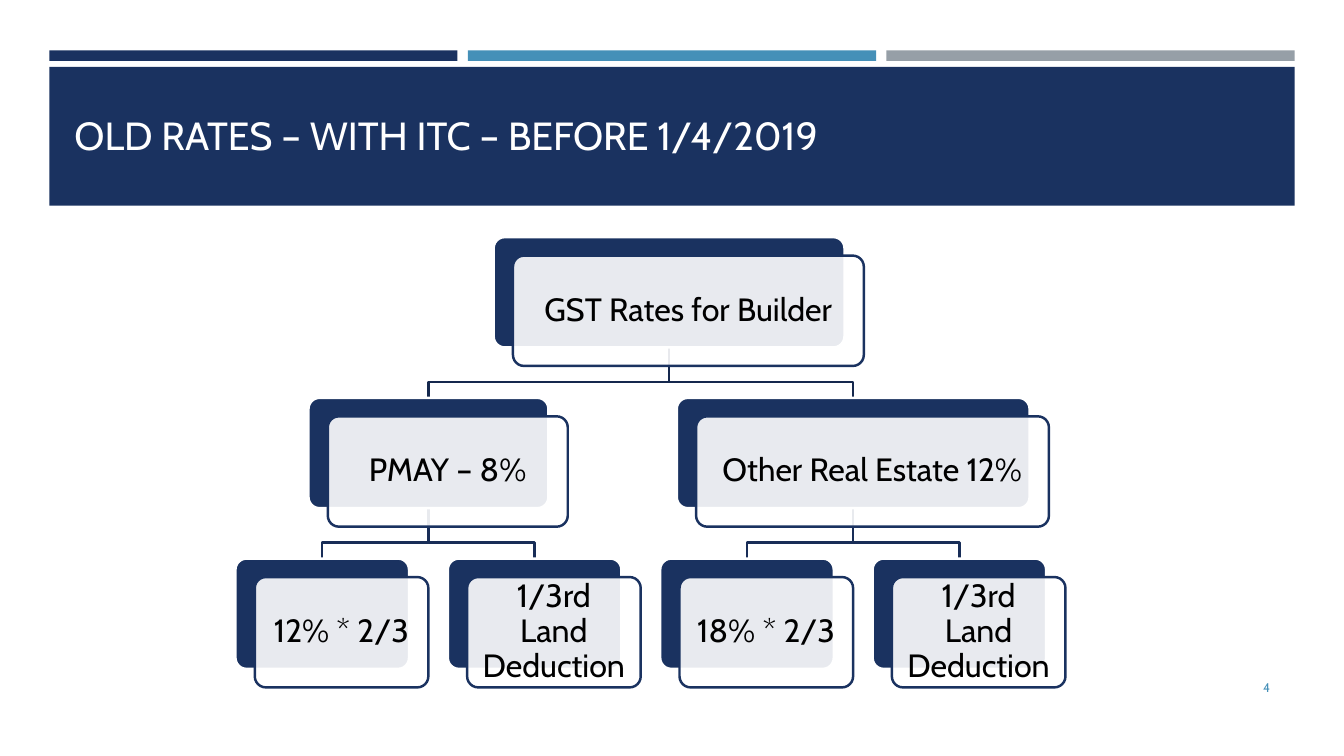
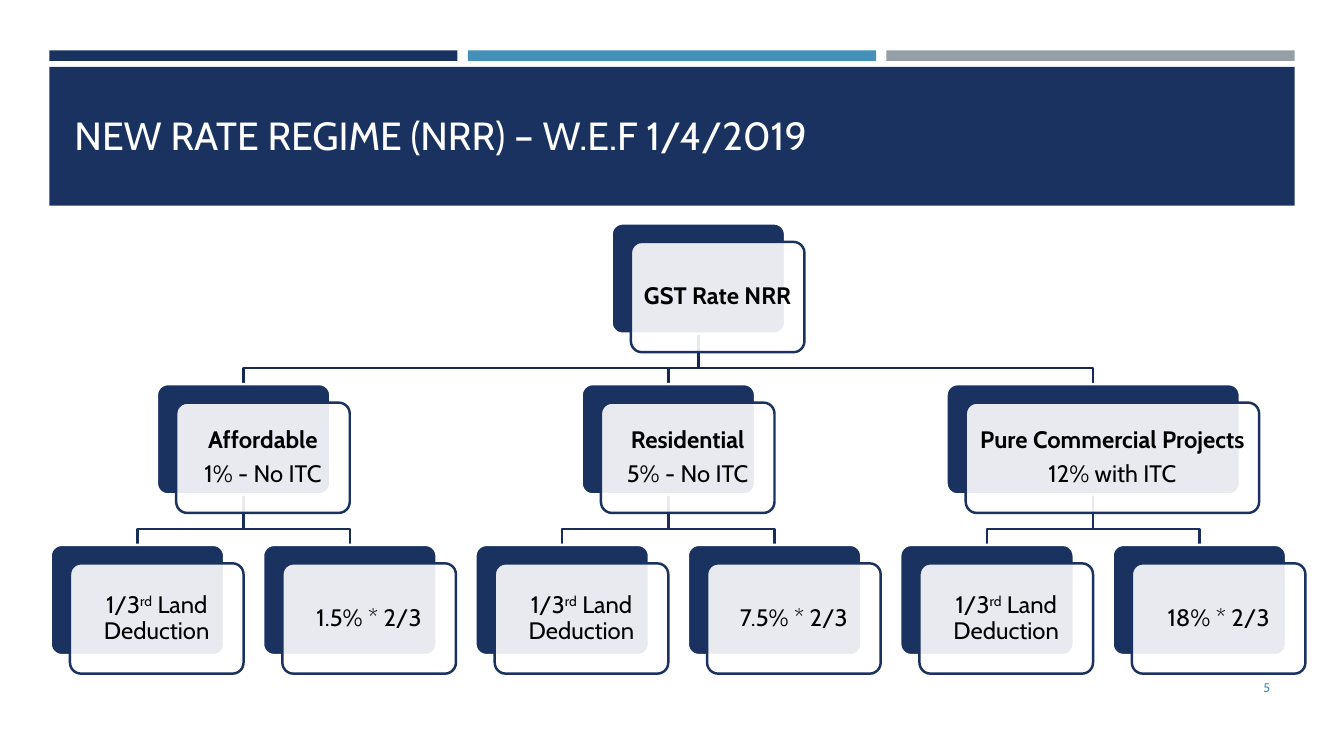
from lxml import etree
from pptx import Presentation
from pptx.dml.color import RGBColor
from pptx.enum.shapes import MSO_SHAPE
from pptx.enum.text import MSO_ANCHOR, PP_ALIGN
from pptx.oxml.ns import qn
from pptx.util import Pt

RECT, ROUNDED = MSO_SHAPE.RECTANGLE, MSO_SHAPE.ROUNDED_RECTANGLE
MIDDLE = MSO_ANCHOR.MIDDLE
LEFT, CENTER, RIGHT = PP_ALIGN.LEFT, PP_ALIGN.CENTER, PP_ALIGN.RIGHT

NAVY = RGBColor(0x1A, 0x32, 0x60)
BLUE = RGBColor(0x45, 0x90, 0xB8)
GREY = RGBColor(0x96, 0x9F, 0xA7)
WHITE = RGBColor(0xFF, 0xFF, 0xFF)
BLACK = RGBColor(0x00, 0x00, 0x00)
ROOT_LINK = RGBColor(0x15, 0x28, 0x4D)
BRANCH_LINK = RGBColor(0x18, 0x2D, 0x57)
FONT = "Cabin"

# Band measures in points: three strips share the width of the title band
BAND_LEFT, BAND_WIDTH, STRIP_GAP = 35.2, 889.6, 7.4
STRIP_WIDTH = (BAND_WIDTH - 2 * STRIP_GAP) / 3

# Tree measures in points
LEAF_WIDTH, LEAF_PITCH = 124, 151.7
CARD_HEIGHT, LEVEL_PITCH = 78.8, 114.8
FRONT_DX, FRONT_DY = 13.8, 13.2
LINK_BEND = 24.6
LINE_WIDTH = 1.75

# Each branch: card width, lines, leaves; ^ encloses superscript
LAND = "1/3^rd^ Land Deduction"
TREES = [
    {
        "title": "OLD RATES – WITH ITC – BEFORE 1/4/2019", "page": "4",
        "left": 168.2, "top": 169.4, "size": 23, "inset": 6.9, "bold_heads": False,
        "root": (250.6, ["GST Rates for Builder"]),
        "branches": [
            (171.4, ["PMAY – 8%"], ["12% * 2/3", "1/3rd Land Deduction"]),
            (252, ["Other Real Estate 12%"], ["18% * 2/3", "1/3rd Land Deduction"]),
        ],
    },
    {
        "title": "NEW RATE REGIME (NRR) – W.E.F 1/4/2019", "page": "5",
        "left": 36.2, "top": 159.6, "size": 17, "inset": 5.1, "bold_heads": True,
        "root": (LEAF_WIDTH, ["GST Rate NRR"]),
        "branches": [
            (LEAF_WIDTH, ["Affordable", "1% - No ITC"], [LAND, "1.5% * 2/3"]),
            (LEAF_WIDTH, ["Residential", "5% - No ITC"], [LAND, "7.5% * 2/3"]),
            (209.6, ["Pure Commercial Projects", "12% with ITC"], [LAND, "18% * 2/3"]),
        ],
    },
]


def add_block(slide, kind, left, top, width, height, fill, line=None):
    block = slide.shapes.add_shape(kind, Pt(left), Pt(top), Pt(width), Pt(height))
    block.shadow.inherit = False
    block.fill.solid()
    block.fill.fore_color.rgb = fill
    if line is None:
        block.line.fill.background()
    else:
        block.line.color.rgb = line
        block.line.width = Pt(LINE_WIDTH)
        block.adjustments[0] = 0.1
    return block


def style_text(paragraph, size, color, align):
    paragraph.alignment = align
    for run in paragraph.runs:
        run.font.name = FONT
        run.font.size = Pt(size)
        run.font.color.rgb = color


prs = Presentation()
prs.slide_width, prs.slide_height = Pt(960), Pt(540)
title_only = prs.slide_layouts[5]

for number, tree in enumerate(TREES):
    slide = prs.slides.add_slide(title_only)

    # Bands shared by all slides, moved onto the layout
    if number == 0:
        bands = [add_block(slide, RECT, BAND_LEFT + i * (STRIP_WIDTH + STRIP_GAP), 36,
                           STRIP_WIDTH, 7.5, color)
                 for i, color in enumerate((NAVY, BLUE, GREY))]
        bands.append(add_block(slide, RECT, BAND_LEFT, 47.8, BAND_WIDTH, 99.2, NAVY))
        for i, band in enumerate(bands):
            band.element.nvSpPr.cNvPr.set("id", str(101 + i))
            title_only.shapes.element.insert(2 + i, band.element)

    # Title
    title = slide.shapes.title
    title.left, title.top, title.width, title.height = Pt(46), Pt(57.6), Pt(868.4), Pt(78)
    title.text_frame.text = tree["title"]
    title.text_frame.vertical_anchor = MIDDLE
    style_text(title.text_frame.paragraphs[0], 28, WHITE, LEFT)

    # Page number, clear of the lowest cards
    page = slide.shapes.add_textbox(Pt(831.6), Pt(477), Pt(82.8), Pt(28.8))
    page.text_frame.word_wrap = True
    page.text_frame.vertical_anchor = MIDDLE
    page.text_frame.text = tree["page"]
    style_text(page.text_frame.paragraphs[0], 9, BLUE, RIGHT)

    # Place the cards: every parent is centred over the outer edges of its children
    cards, links = [], []
    branch_spans = []
    leaf_left = tree["left"]
    branch_top = tree["top"] + LEVEL_PITCH
    leaf_top = branch_top + LEVEL_PITCH
    for width, lines, leaves in tree["branches"]:
        first_left = leaf_left
        leaf_centers = []
        for leaf in leaves:
            cards.append((leaf_left, leaf_top, LEAF_WIDTH, [leaf], False))
            leaf_centers.append(leaf_left + LEAF_WIDTH / 2)
            leaf_left += LEAF_PITCH
        center = (first_left + leaf_left - LEAF_PITCH + LEAF_WIDTH) / 2
        links += [(center, x, branch_top, BRANCH_LINK) for x in leaf_centers]
        cards.append((center - width / 2, branch_top, width, lines, tree["bold_heads"]))
        branch_spans.append((center - width / 2, center + width / 2))
    root_width, root_lines = tree["root"]
    root_center = (branch_spans[0][0] + branch_spans[-1][1]) / 2
    links += [(root_center, (start + end) / 2, tree["top"], ROOT_LINK)
              for start, end in branch_spans]
    cards.append((root_center - root_width / 2, tree["top"], root_width,
                  root_lines, tree["bold_heads"]))

    # Links from parent to child, behind the cards
    for parent_x, child_x, parent_top, color in links:
        start_y = parent_top + CARD_HEIGHT
        bend_y = start_y + LINK_BEND
        outline = slide.shapes.build_freeform(Pt(parent_x), Pt(start_y))
        outline.add_line_segments(
            [(Pt(parent_x), Pt(bend_y)), (Pt(child_x), Pt(bend_y)),
             (Pt(child_x), Pt(parent_top + LEVEL_PITCH))], close=False)
        link = outline.convert_to_shape()
        link.shadow.inherit = False
        link.fill.background()
        link.line.color.rgb = color
        link.line.width = Pt(LINE_WIDTH)

    # Cards: a navy back and a translucent front that holds the text
    for left, top, width, lines, bold_head in cards:
        add_block(slide, ROUNDED, left, top, width, CARD_HEIGHT, NAVY, WHITE)
        front = add_block(slide, ROUNDED, left + FRONT_DX, top + FRONT_DY,
                          width, CARD_HEIGHT, WHITE, NAVY)
        front_color = front.element.spPr.find(qn("a:solidFill"))[0]
        etree.SubElement(front_color, qn("a:alpha"), val="90000")

        frame = front.text_frame
        frame.word_wrap = True
        frame.vertical_anchor = MIDDLE
        frame.margin_left = frame.margin_right = Pt(tree["inset"])
        frame.margin_top = frame.margin_bottom = Pt(tree["inset"])
        for i, line in enumerate(lines):
            paragraph = frame.add_paragraph() if i else frame.paragraphs[0]
            for j, part in enumerate(line.split("^")):
                run = paragraph.add_run()
                run.text = part
                run.font.bold = bold_head and i == 0
                if j % 2:
                    run.font._element.set("baseline", "30000")
            style_text(paragraph, tree["size"], BLACK, CENTER)
            paragraph.line_spacing = 0.9
            paragraph.space_before = Pt(6 if i else 0)

prs.save("out.pptx")
